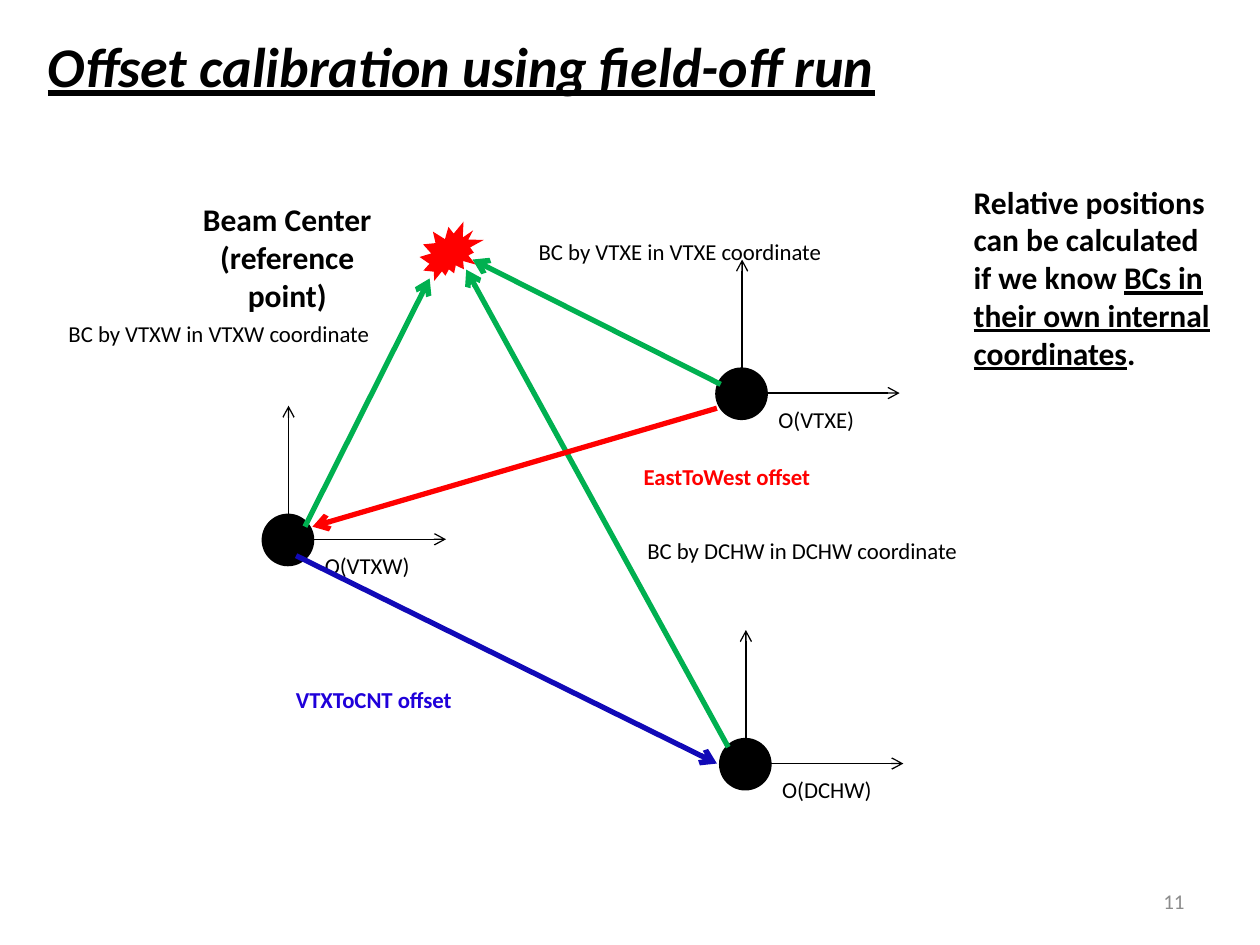
from dataclasses import dataclass

from lxml.etree import SubElement
from pptx import Presentation
from pptx.dml.color import RGBColor
from pptx.enum.shapes import MSO_CONNECTOR, MSO_SHAPE
from pptx.enum.text import MSO_ANCHOR, PP_ALIGN
from pptx.oxml.ns import qn
from pptx.slide import Slide
from pptx.util import Inches, Pt

BLACK = RGBColor(0x00, 0x00, 0x00)
GRAY = RGBColor(0x8C, 0x8C, 0x8C)
RED = RGBColor(0xFF, 0x00, 0x00)
GREEN = RGBColor(0x00, 0xB0, 0x50)
BLUE = RGBColor(0x11, 0x09, 0xB7)
VIOLET = RGBColor(0x1F, 0x00, 0xDA)
FONT = "Calibri"
DOT_SIZE = 0.39


@dataclass(frozen=True)
class Origin:
    name: str
    left: float
    top: float


@dataclass(frozen=True)
class Vector:
    start: tuple[float, float]
    end: tuple[float, float]
    color: RGBColor


@dataclass(frozen=True)
class Label:
    text: str
    left: float
    top: float
    width: float
    color: RGBColor = BLACK
    bold: bool = False
    align: PP_ALIGN = PP_ALIGN.CENTER
    wrap: bool = True


ORIGINS = [
    Origin("DCHW", 5.72, 5.87),
    Origin("VTXW", 2.09, 4.09),
    Origin("VTXE", 5.69, 2.93),
]
VECTORS = [
    Vector((2.42, 4.18), (3.41, 2.21), GREEN),
    Vector((5.72, 3.05), (3.75, 2.06), GREEN),
    Vector((5.78, 5.93), (3.7, 2.14), GREEN),
    Vector((5.69, 3.24), (2.48, 4.18), RED),
    Vector((2.35, 4.41), (5.69, 6.06), BLUE),
]
LABELS = [
    Label("BC by VTXW in VTXW coordinate", 0.11, 2.49, 3.25),
    Label("BC by VTXE in VTXE coordinate", 4.01, 1.84, 2.77),
    Label("BC by DCHW in DCHW coordinate", 4.9, 4.21, 2.93),
    Label("EastToWest offset", 5.01, 3.62, 1.59, RED, True, PP_ALIGN.LEFT, False),
    Label("VTXToCNT offset", 2.25, 5.39, 1.5, VIOLET, True, PP_ALIGN.LEFT, False),
]


def add_text(page: Slide, paragraphs: list[list[tuple[str, bool]]],
             left: float, top: float, width: float, height: float, *,
             size: float = 13, color: RGBColor = BLACK, bold: bool = False,
             italic: bool = False, align: PP_ALIGN = PP_ALIGN.LEFT,
             anchor: MSO_ANCHOR = MSO_ANCHOR.TOP, wrap: bool = True) -> None:
    box = page.shapes.add_textbox(Inches(left), Inches(top), Inches(width), Inches(height))
    frame = box.text_frame
    frame.word_wrap = wrap
    frame.vertical_anchor = anchor
    for index, spans in enumerate(paragraphs):
        para = frame.add_paragraph() if index else frame.paragraphs[0]
        para.alignment = align
        for text, underline in spans:
            span = para.add_run()
            span.text = text
            span.font.name = FONT
            span.font.size = Pt(size)
            span.font.bold = bold
            span.font.italic = italic
            span.font.underline = underline
            span.font.color.rgb = color


def add_arrow(page: Slide, vector: Vector, weight: float) -> None:
    points = [Inches(value) for value in (*vector.start, *vector.end)]
    arrow = page.shapes.add_connector(MSO_CONNECTOR.STRAIGHT, *points)
    arrow.line.color.rgb = vector.color
    arrow.line.width = Pt(weight)
    SubElement(arrow.line._get_or_add_ln(), qn("a:tailEnd"), type="arrow")
    SubElement(arrow._element.spPr, qn("a:effectLst"))


def add_solid(page: Slide, kind: MSO_SHAPE, left: float, top: float,
              width: float, height: float, color: RGBColor, outlined: bool) -> None:
    solid = page.shapes.add_shape(kind, Inches(left), Inches(top), Inches(width), Inches(height))
    solid.shadow.inherit = False
    solid.fill.solid()
    solid.fill.fore_color.rgb = color
    if outlined:
        solid.line.color.rgb = color
        solid.line.width = Pt(2)
    else:
        solid.line.fill.background()


def add_origin(page: Slide, origin: Origin) -> None:
    add_solid(page, MSO_SHAPE.OVAL, origin.left, origin.top, DOT_SIZE, DOT_SIZE, BLACK, True)
    center = (origin.left + 0.2, origin.top + 0.19)
    for end in ((center[0], center[1] - 1.06), (center[0] + 1.25, center[1])):
        add_arrow(page, Vector(center, end, BLACK), 0.75)
    add_text(page, [[(f"O({origin.name})", False)]],
             origin.left + DOT_SIZE, origin.top + 0.24, 1.26, 0.32)


def main() -> None:
    deck = Presentation()
    deck.slide_width = Inches(10)
    deck.slide_height = Inches(7.5)
    page = deck.slides.add_slide(deck.slide_layouts[6])

    add_text(page, [[("11", False)]], 7.17, 6.95, 2.33, 0.4, size=12, color=GRAY,
             align=PP_ALIGN.RIGHT, anchor=MSO_ANCHOR.MIDDLE)
    add_text(page, [[("Offset calibration using field-off run", True)]], 0.28, 0.21, 9, 0.61,
             size=32, bold=True, italic=True, anchor=MSO_ANCHOR.MIDDLE)
    for origin in ORIGINS:
        add_origin(page, origin)
    add_solid(page, MSO_SHAPE.EXPLOSION2, 3.33, 1.76, 0.51, 0.47, RED, False)
    add_text(page, [[("Beam Center", False)], [("(reference point)", False)]],
             1.33, 1.54, 1.9, 0.71, size=18, bold=True, align=PP_ALIGN.CENTER)
    for vector in VECTORS:
        add_arrow(page, vector, 3)
    for label in LABELS:
        add_text(page, [[(label.text, False)]], label.left, label.top, label.width, 0.32,
                 color=label.color, bold=label.bold, align=label.align, wrap=label.wrap)
    add_text(page, [[("Relative positions can be calculated if we know ", False),
                     ("BCs in their own internal coordinates", True), (".", False)]],
             7.63, 1.4, 2.17, 1.62, size=18, bold=True)
    deck.save("out.pptx")


if __name__ == "__main__":
    main()
